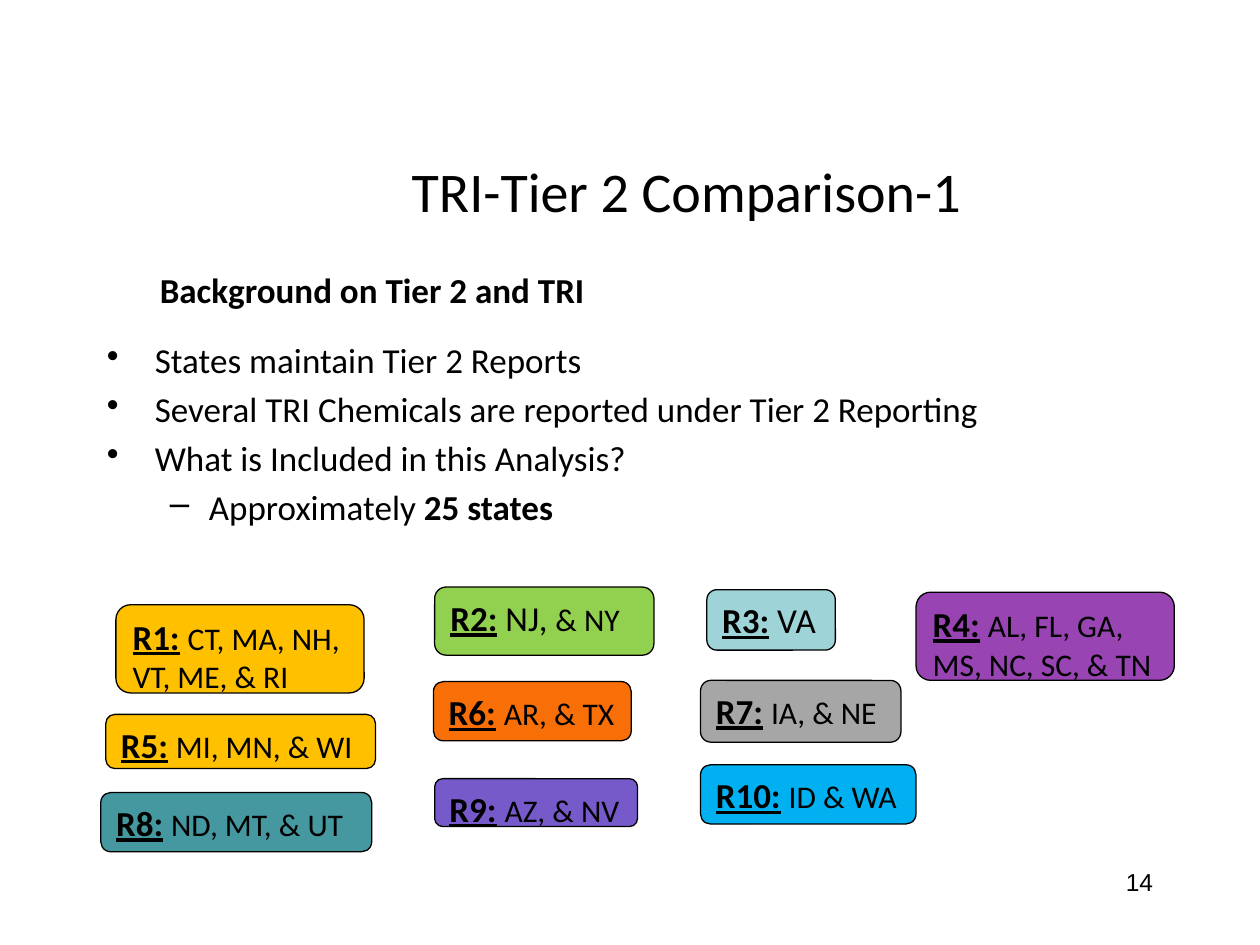
from dataclasses import dataclass

import pptx
import pptx.dml.color
import pptx.enum.shapes
import pptx.enum.text
import pptx.oxml
import pptx.oxml.ns
import pptx.util
from pptx.util import Inches

ALIGN = pptx.enum.text.PP_ALIGN
ANCHOR = pptx.enum.text.MSO_ANCHOR


@dataclass
class Region:
    name: str
    lead: str  # text at the larger size, after the name
    states: str
    fill: str
    left: float
    top: float
    width: float
    height: float


@dataclass
class Bullet:
    text: str
    bold: str = ""
    level: int = 0


REGIONS = [
    Region("R1:", " ", "CT, MA, NH, VT, ME, & RI", "FFC000", 0.92, 4.8, 1.97, 0.7),
    Region("R2:", " NJ, ", "& NY", "92D050", 3.45, 4.66, 1.74, 0.54),
    Region("R3:", " VA", "", "9ED3D7", 5.61, 4.68, 1.02, 0.48),
    Region("R4:", " ", "AL, FL, GA, MS, NC, SC, & TN", "9844B2", 7.27, 4.7, 2.05, 0.7),
    Region("R5:", " ", "MI, MN, & WI", "FFC000", 0.84, 5.67, 2.14, 0.43),
    Region("R6:", " ", "AR, & TX", "F96F07", 3.44, 5.41, 1.57, 0.47),
    Region("R7:", " ", "IA, & NE", "A6A6A6", 5.56, 5.4, 1.59, 0.49),
    Region("R8:", " ", "ND, MT, & UT", "4597A0", 0.8, 6.29, 2.15, 0.47),
    Region("R9:", " ", "AZ, & NV", "775ACA", 3.45, 6.18, 1.61, 0.38),
    Region("R10:", " ", "ID & WA", "00B0F0", 5.56, 6.07, 1.71, 0.47),
]

BULLETS = [
    Bullet("States maintain Tier 2 Reports"),
    Bullet("Several TRI Chemicals are reported under Tier 2 Reporting"),
    Bullet("What is Included in this Analysis?"),
    Bullet("Approximately ", "25 states", 1),
]
MARKS = [("•", 0.38, -0.38), ("–", 0.81, -0.31)]  # sign, margin, indent


def paint(target, color: str) -> None:
    """Give a fill or line format one solid colour."""
    fill = target if hasattr(target, "solid") else target.fill
    fill.solid()
    fill.fore_color.rgb = pptx.dml.color.RGBColor.from_string(color)


def style(font, size: float, name: str = "Calibri") -> None:
    font.name = name
    font.size = pptx.util.Pt(size)
    paint(font.fill, "000000")


def add_box(slide, left: float, top: float, width: float, height: float):
    """Add a wrapping text box and return its frame."""
    box = slide.shapes.add_textbox(
        Inches(left), Inches(top), Inches(width), Inches(height))
    box.text_frame.word_wrap = True
    return box.text_frame


def add_line(frame, text: str, size: float, align=ALIGN.LEFT,
             name: str = "Calibri", bold: bool = False) -> None:
    """Fill the first paragraph of a frame."""
    para = frame.paragraphs[0]
    para.text = text
    para.alignment = align
    style(para.font, size, name)
    para.font.bold = bold


def add_list(frame, items: list[Bullet]) -> None:
    for num, item in enumerate(items):
        para = frame.add_paragraph() if num else frame.paragraphs[0]
        if num:
            para.space_before = pptx.util.Pt(4)
        para.level = item.level
        sign, margin, indent = MARKS[item.level]
        props = para._p.get_or_add_pPr()
        props.set("marL", str(Inches(margin)))
        props.set("indent", str(Inches(indent)))
        mark = pptx.oxml.parse_xml(
            f'<a:buChar {pptx.oxml.ns.nsdecls("a")} char="{sign}"/>')
        props.append(mark)
        style(para.font, 20)
        para.add_run().text = item.text
        if item.bold:
            run = para.add_run()
            run.text = item.bold
            run.font.bold = True


def add_region(slide, region: Region) -> None:
    shape = slide.shapes.add_shape(
        pptx.enum.shapes.MSO_SHAPE.ROUNDED_RECTANGLE,
        Inches(region.left), Inches(region.top),
        Inches(region.width), Inches(region.height))
    shape.shadow.inherit = False
    paint(shape.fill, region.fill)
    paint(shape.line, "000000")
    shape.line.width = pptx.util.Pt(0.75)
    frame = shape.text_frame
    frame.word_wrap = True
    frame.vertical_anchor = ANCHOR.TOP
    frame.margin_right = Inches(0.05)
    para = frame.paragraphs[0]
    para.alignment = ALIGN.LEFT
    parts = [(region.name, 20), (region.lead, 20), (region.states, 18)]
    for text, size in parts:
        if text:
            run = para.add_run()
            run.text = text
            style(run.font, size)
            run.font.bold = run.font.underline = text == region.name


def main() -> None:
    deck = pptx.Presentation()
    deck.slide_width, deck.slide_height = Inches(10), Inches(7.5)
    slide = deck.slides.add_slide(deck.slide_layouts[6])

    title = add_box(slide, 1.25, 1.09, 8.5, 0.83)
    title.vertical_anchor = ANCHOR.MIDDLE
    add_line(title, "TRI-Tier 2 Comparison-1 ", 32, ALIGN.CENTER)
    add_list(add_box(slide, 0.75, 2.64, 8.75, 4.33), BULLETS)
    add_line(add_box(slide, 1.17, 2.08, 5.58, 0.44),
             "Background on Tier 2 and TRI", 20, bold=True)
    for region in REGIONS:
        add_region(slide, region)
    add_line(add_box(slide, 7.17, 6.83, 2.08, 0.5), "14", 14, ALIGN.RIGHT, "Arial")

    deck.save("out.pptx")


if __name__ == "__main__":
    main()
